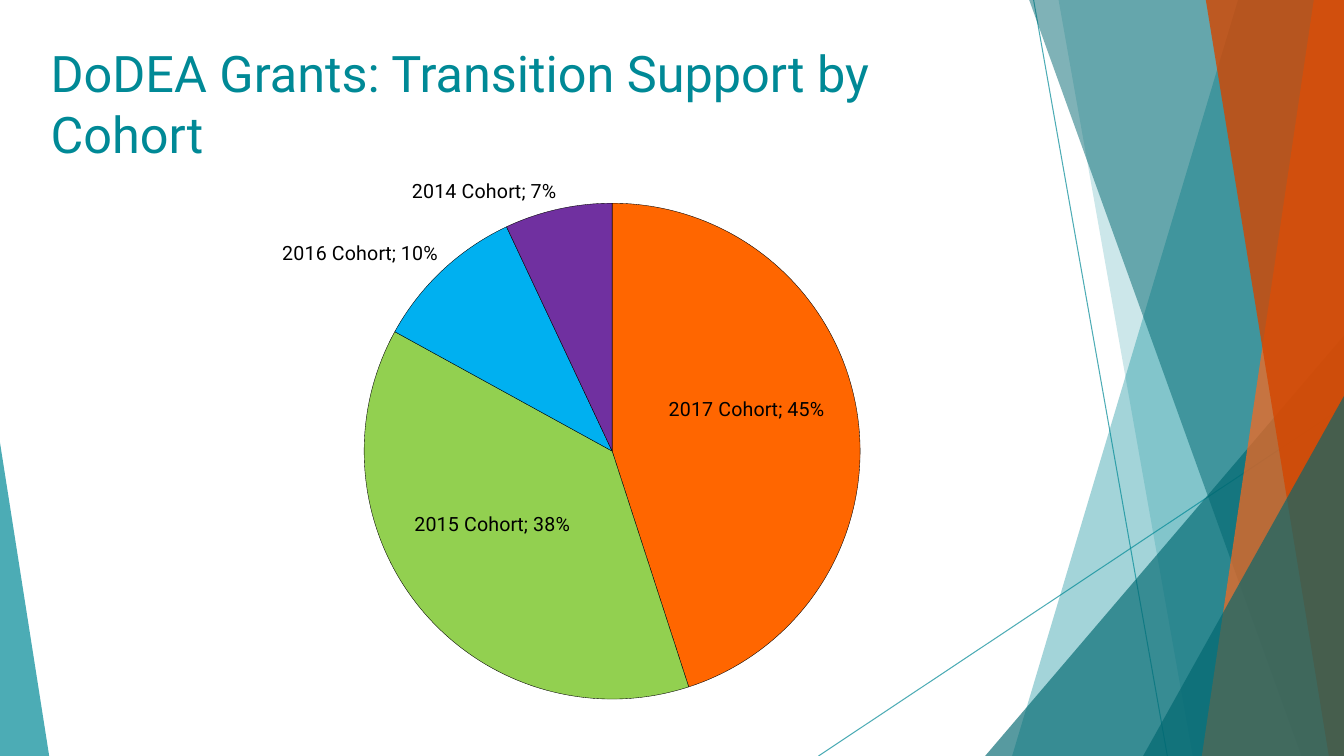
from pptx import Presentation
from pptx import util as u
from pptx.chart.data import CategoryChartData
from pptx.dml.color import RGBColor
from pptx.enum import chart as charts, shapes, text
from pptx.oxml import parse_xml
from pptx.oxml.ns import nsdecls, qn

Cm = u.Cm
WIDTH, HEIGHT = 33.86, 19.05
FONT = "Roboto"
TEAL = RGBColor(0x00, 0x89, 0x96)
DEEP_TEAL = RGBColor(0x00, 0x67, 0x70)
ORANGE = RGBColor(0xFF, 0x67, 0x1B)
RUST = RGBColor(0xD4, 0x46, 0x00)
BLACK = RGBColor(0x00, 0x00, 0x00)

# cohort, share, slice colour
COHORTS = [
    ("2017 Cohort", 0.45, RGBColor(0xFF, 0x66, 0x00)),
    ("2015 Cohort", 0.38, RGBColor(0x92, 0xD0, 0x50)),
    ("2016 Cohort", 0.10, RGBColor(0x00, 0xB0, 0xF0)),
    ("2014 Cohort", 0.07, RGBColor(0x70, 0x30, 0xA0)),
]
# slice index: label shift as a share of the chart size
INNER_LABELS = {0: (0.01, -0.04), 1: (-0.02, -0.01)}
PLOT_AREA = {"x": 0.28, "y": 0.07, "w": 0.41, "h": 0.9}


def set_alpha(fill, percent):
    color = fill._xPr.find(qn("a:solidFill"))[0]
    color.append(parse_xml(f'<a:alpha {nsdecls("a")} val="{percent * 1000}"/>'))


def paint(shape, color, percent):
    shape.shadow.inherit = False
    shape.line.fill.background()
    shape.fill.solid()
    shape.fill.fore_color.rgb = color
    set_alpha(shape.fill, percent)


def add_ray(page, start, end):
    ray = page.shapes.add_connector(
        shapes.MSO_CONNECTOR.STRAIGHT, *(Cm(value) for value in start + end))
    ray.line.width = u.Pt(0.75)
    ray.line.color.rgb = TEAL
    set_alpha(ray.line.fill, 70)
    ray.element.spPr.append(parse_xml(f'<a:effectLst {nsdecls("a")}/>'))


def add_facet(page, top_left, bottom_left, color, percent):
    """Band from a slanted left edge to the right edge of the slide."""
    builder = page.shapes.build_freeform(Cm(top_left), 0)
    corners = [(WIDTH, 0), (WIDTH, HEIGHT), (bottom_left, HEIGHT)]
    builder.add_line_segments([(Cm(x), Cm(y)) for x, y in corners])
    paint(builder.convert_to_shape(), color, percent)


def add_corner(page, left, top, width, apex, color, percent):
    """Triangle standing on the bottom edge of the slide."""
    corner = page.shapes.add_shape(
        shapes.MSO_SHAPE.ISOSCELES_TRIANGLE,
        Cm(left), Cm(top), Cm(width), Cm(HEIGHT - top))
    corner.adjustments[0] = apex
    paint(corner, color, percent)


def add_backdrop(page):
    add_ray(page, (26.04, 0), (29.41, HEIGHT))
    add_ray(page, (WIDTH, 10.24), (20.62, HEIGHT))
    add_facet(page, 31.19, 25.5, TEAL, 36)
    add_facet(page, 26.67, 30.05, TEAL, 20)
    add_corner(page, 24.82, 8.46, 9.04, 1, DEEP_TEAL, 66)
    add_facet(page, 25.93, 32.79, DEEP_TEAL, 50)
    add_facet(page, 33.1, 30.28, ORANGE, 70)
    add_facet(page, 30.38, 33.48, RUST, 80)
    add_corner(page, 28.8, 9.98, 5.06, 1, DEEP_TEAL, 66)
    add_corner(page, 0, 11.15, 1.24, 0, TEAL, 70)


def set_title(page, words):
    title = page.shapes.title
    page.shapes.element.append(title.element)  # in front of the backdrop
    title.left, title.top, title.width, title.height = (
        Cm(1.02), Cm(0.76), Cm(23.88), Cm(3.66))
    frame = title.text_frame
    frame.text = words
    frame.auto_size = text.MSO_AUTO_SIZE.NONE
    frame.vertical_anchor = text.MSO_ANCHOR.MIDDLE
    para = frame.paragraphs[0]
    para.alignment = text.PP_ALIGN.LEFT
    font = para.runs[0].font
    font.name, font.size, font.color.rgb = FONT, u.Pt(36), TEAL


def manual_layout(values, inner=False):
    target = '<c:layoutTarget val="inner"/>' if inner else ""
    if inner:
        target += '<c:xMode val="edge"/><c:yMode val="edge"/>'
    places = "".join(f'<c:{key} val="{value}"/>' for key, value in values.items())
    return parse_xml(f'<c:layout {nsdecls("c")}><c:manualLayout>{target}{places}'
                     "</c:manualLayout></c:layout>")


def format_label(label, element, position):
    """Show category and value, for one label or for a whole series."""
    label.font.name, label.font.size = FONT, u.Pt(14)
    label.font.color.rgb = BLACK
    label.position = position
    element.find(qn("c:showVal")).set("val", "1")
    element.find(qn("c:showCatName")).set("val", "1")
    element.find(qn("c:showPercent")).set("val", "0")
    separator = parse_xml(f'<c:separator {nsdecls("c")}>; </c:separator>')
    last_flag = element.find(qn("c:showBubbleSize"))
    if last_flag is None:
        last_flag = element.find(qn("c:showPercent"))
    last_flag.addnext(separator)


def add_cohort_pie(page):
    data = CategoryChartData(number_format="0%")
    data.categories = [name for name, _, _ in COHORTS]
    data.add_series("Series 1", [share for _, share, _ in COHORTS])
    chart = page.shapes.add_chart(
        charts.XL_CHART_TYPE.PIE, Cm(0.64), Cm(4.09), Cm(30.48), Cm(14), data).chart
    chart.has_legend = False
    chart.has_title = False
    chart.font.name, chart.font.size = FONT, u.Pt(10)
    chart.font.color.rgb = BLACK

    plot_area = chart.element.find(".//" + qn("c:plotArea"))
    for layout in plot_area.findall(qn("c:layout")):
        plot_area.remove(layout)
    plot_area.insert(0, manual_layout(PLOT_AREA, inner=True))

    series = chart.plots[0].series[0]
    for index, (_, _, color) in enumerate(COHORTS):
        slice_format = series.points[index].format
        slice_format.fill.solid()
        slice_format.fill.fore_color.rgb = color
        slice_format.line.color.rgb = BLACK
        slice_format.line.width = u.Pt(0.25)

    labels = series.data_labels
    labels.number_format, labels.number_format_is_linked = "0%", False
    format_label(labels, labels._element, charts.XL_LABEL_POSITION.OUTSIDE_END)
    for index, (shift_x, shift_y) in INNER_LABELS.items():
        label = series.points[index].data_label
        label.position = charts.XL_LABEL_POSITION.CENTER
        element = labels._element.findall(qn("c:dLbl"))[index]
        format_label(label, element, charts.XL_LABEL_POSITION.CENTER)
        element.find(qn("c:idx")).addnext(
            manual_layout({"x": shift_x, "y": shift_y}))


def main():
    deck = Presentation()
    deck.slide_width, deck.slide_height = Cm(WIDTH), Cm(HEIGHT)
    page = deck.slides.add_slide(deck.slide_layouts[5])
    add_backdrop(page)
    set_title(page, "DoDEA Grants: Transition Support by Cohort")
    add_cohort_pie(page)
    deck.save("out.pptx")


if __name__ == "__main__":
    main()
